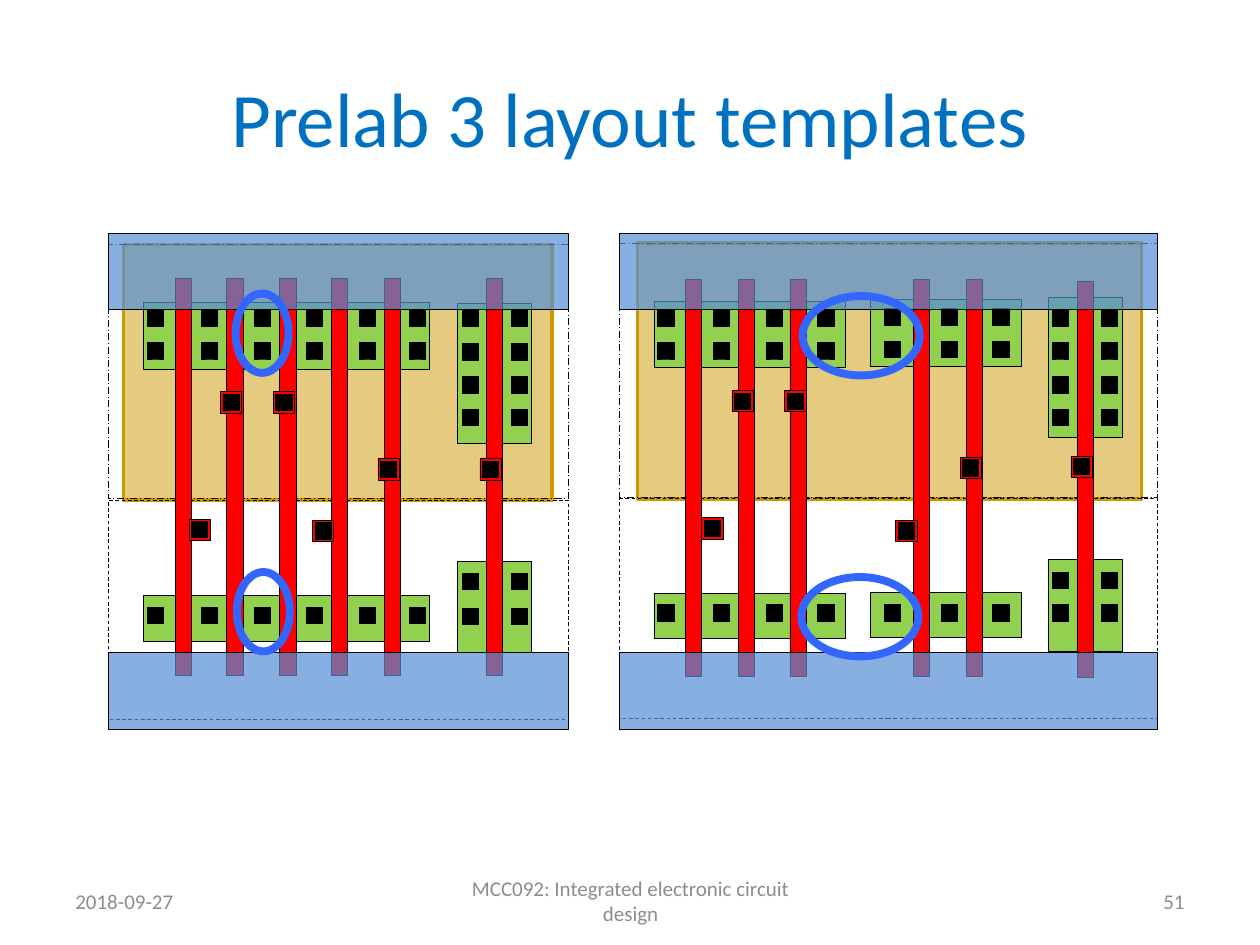
from dataclasses import dataclass
from itertools import product
from typing import Optional

from lxml import etree
from pptx import Presentation
from pptx.dml.color import RGBColor
from pptx.enum.dml import MSO_LINE
from pptx.enum.shapes import MSO_SHAPE
from pptx.enum.text import MSO_ANCHOR, PP_ALIGN
from pptx.oxml.ns import qn
from pptx.shapes.shapetree import GroupShapes, SlideShapes
from pptx.util import Inches, Pt

RECTANGLE, OVAL = MSO_SHAPE.RECTANGLE, MSO_SHAPE.OVAL
DASH, LONG_DASH_DOT = MSO_LINE.DASH, MSO_LINE.LONG_DASH_DOT
LEFT, CENTER, RIGHT = PP_ALIGN.LEFT, PP_ALIGN.CENTER, PP_ALIGN.RIGHT
MIDDLE = MSO_ANCHOR.MIDDLE

BLACK = RGBColor(0x00, 0x00, 0x00)
WELL_OCHRE = RGBColor(0xCC, 0x99, 0x00)
DIFFUSION_GREEN = RGBColor(0x92, 0xD0, 0x50)
POLY_RED = RGBColor(0xFF, 0x00, 0x00)
METAL_BLUE = RGBColor(0x55, 0x8E, 0xD5)
HIGHLIGHT_BLUE = RGBColor(0x33, 0x66, 0xFF)
TITLE_BLUE = RGBColor(0x00, 0x70, 0xC0)
FOOTER_GRAY = RGBColor(0x8C, 0x8C, 0x8C)

CONTACT_SIZE = 0.13
PAD_SIZE = 0.17
PAD_MARGIN = 0.02
GATE_WIDTH, GATE_HEIGHT = 0.13, 3.15
RAIL_HEIGHT = 0.61
RAIL_TOPS = (1.85, 5.18)


@dataclass(frozen=True)
class Box:
    left: float
    top: float
    width: float
    height: float


@dataclass(frozen=True)
class Style:
    fill: Optional[RGBColor] = None
    opacity: int = 100
    line: RGBColor = BLACK
    line_width: float = 0.5
    dash: Optional[MSO_LINE] = None


@dataclass(frozen=True)
class ContactGrid:
    lefts: tuple[float, ...]
    tops: tuple[float, ...]


@dataclass(frozen=True)
class Template:
    well: Box
    p_region: Box
    n_region: Box
    diffusions: tuple[Box, ...]
    gates: tuple[tuple[float, float], ...]
    contacts: tuple[ContactGrid, ...]
    pads: tuple[tuple[float, float], ...]


@dataclass(frozen=True)
class Caption:
    box: Box
    text: str
    size: int
    color: RGBColor
    align: PP_ALIGN


WELL = Style(WELL_OCHRE, 50, WELL_OCHRE, 2)
P_OUTLINE = Style(dash=LONG_DASH_DOT)
N_OUTLINE = Style(dash=DASH)
DIFFUSION = Style(DIFFUSION_GREEN)
POLY = Style(POLY_RED)
CONTACT = Style(BLACK)
METAL = Style(METAL_BLUE, 70)
HIGHLIGHT = Style(line=HIGHLIGHT_BLUE, line_width=4.5)

SHARED_DIFFUSION = Template(
    well=Box(0.98, 1.94, 3.4, 2.03),
    p_region=Box(0.86, 1.94, 3.65, 2.02),
    n_region=Box(0.86, 3.97, 3.65, 1.74),
    diffusions=(
        Box(1.14, 4.73, 2.27, 0.36),
        Box(1.14, 2.4, 2.27, 0.53),
        Box(3.63, 2.41, 0.59, 1.11),
        Box(3.63, 4.46, 0.59, 0.72),
    ),
    gates=tuple((left, 2.21) for left in (1.39, 1.8, 2.22, 2.63, 3.05, 3.86)),
    contacts=(
        ContactGrid((1.17, 1.6, 2.02, 2.43, 2.85, 3.25), (2.46, 2.72, 4.82)),
        ContactGrid((3.67, 4.06), (2.46, 2.73, 2.99, 3.25, 4.55, 4.83)),
    ),
    pads=((1.5, 4.12), (1.75, 3.11), (2.17, 3.11), (2.48, 4.13), (3, 3.64), (3.81, 3.64)),
)

SPLIT_DIFFUSION = Template(
    well=Box(5.06, 1.93, 4, 2.03),
    p_region=Box(4.92, 1.93, 4.27, 2.02),
    n_region=Box(4.92, 3.96, 4.27, 1.74),
    diffusions=(
        Box(6.91, 4.7, 1.2, 0.36),
        Box(6.91, 2.38, 1.2, 0.53),
        Box(5.19, 4.71, 1.52, 0.36),
        Box(5.19, 2.39, 1.52, 0.53),
        Box(8.32, 2.36, 0.59, 1.11),
        Box(8.32, 4.44, 0.59, 0.73),
    ),
    gates=(*((left, 2.22) for left in (5.44, 5.86, 6.27, 7.25, 7.67)), (8.55, 2.23)),
    contacts=(
        ContactGrid((5.22, 5.66, 6.08, 6.49), (2.46, 2.72, 4.8)),
        ContactGrid((7.02, 7.47, 7.88), (2.45, 2.71, 4.8)),
        ContactGrid((8.35, 8.74), (2.46, 2.72, 2.99, 3.25, 4.54, 4.8)),
    ),
    pads=((5.57, 4.11), (5.81, 3.1), (6.23, 3.1), (7.11, 4.13), (7.62, 3.63), (8.5, 3.62)),
)

HIGHLIGHTS = (
    Box(1.88, 4.54, 0.42, 0.63),
    Box(6.36, 4.58, 0.93, 0.63),
    Box(1.87, 2.33, 0.42, 0.63),
    Box(6.37, 2.35, 0.93, 0.63),
)

CAPTIONS = (
    Caption(Box(0.5, 0.3, 9, 1.25), "Prelab 3 layout templates", 44, TITLE_BLUE, CENTER),
    Caption(Box(0.5, 6.95, 2.33, 0.4), "2018-09-27", 12, FOOTER_GRAY, LEFT),
    Caption(Box(3.42, 6.95, 3.17, 0.4), "MCC092: Integrated electronic circuit design",
            12, FOOTER_GRAY, CENTER),
    Caption(Box(7.17, 6.95, 2.33, 0.4), "51", 12, FOOTER_GRAY, RIGHT),
)


def lengths(box: Box) -> tuple[Inches, ...]:
    return tuple(Inches(value) for value in (box.left, box.top, box.width, box.height))


def draw(shapes: GroupShapes, box: Box, style: Style, outline: MSO_SHAPE = RECTANGLE) -> None:
    shape = shapes.add_shape(outline, *lengths(box))
    shape.shadow.inherit = False
    if style.fill is None:
        shape.fill.background()
    else:
        shape.fill.solid()
        shape.fill.fore_color.rgb = style.fill
        if style.opacity < 100:
            color = shape.fill._xPr.find(f"{qn('a:solidFill')}/{qn('a:srgbClr')}")
            etree.SubElement(color, qn("a:alpha"), val=str(style.opacity * 1000))
    shape.line.color.rgb = style.line
    shape.line.width = Pt(style.line_width)
    if style.dash is not None:
        shape.line.dash_style = style.dash


def draw_template(shapes: GroupShapes, template: Template) -> None:
    draw(shapes, template.well, WELL)
    draw(shapes, template.p_region, P_OUTLINE)
    draw(shapes, template.n_region, N_OUTLINE)
    for diffusion in template.diffusions:
        draw(shapes, diffusion, DIFFUSION)
    for left, top in template.gates:
        draw(shapes, Box(left, top, GATE_WIDTH, GATE_HEIGHT), POLY)
    for grid in template.contacts:
        for left, top in product(grid.lefts, grid.tops):
            draw(shapes, Box(left, top, CONTACT_SIZE, CONTACT_SIZE), CONTACT)
    for left, top in template.pads:
        draw(shapes, Box(left, top, PAD_SIZE, PAD_SIZE), POLY)
        draw(shapes, Box(left + PAD_MARGIN, top + PAD_MARGIN, CONTACT_SIZE, CONTACT_SIZE), CONTACT)
    for top in RAIL_TOPS:
        draw(shapes, Box(template.p_region.left, top, template.p_region.width, RAIL_HEIGHT), METAL)


def write(shapes: SlideShapes, caption: Caption) -> None:
    frame = shapes.add_textbox(*lengths(caption.box)).text_frame
    frame.word_wrap = True
    frame.vertical_anchor = MIDDLE
    paragraph = frame.paragraphs[0]
    paragraph.alignment = caption.align
    run = paragraph.add_run()
    run.text = caption.text
    run.font.name = "Calibri"
    run.font.size = Pt(caption.size)
    run.font.color.rgb = caption.color


def main() -> None:
    deck = Presentation()
    deck.slide_width, deck.slide_height = Inches(10), Inches(7.5)
    slide = deck.slides.add_slide(deck.slide_layouts[6])
    for caption in CAPTIONS:
        write(slide.shapes, caption)
    for template in (SHARED_DIFFUSION, SPLIT_DIFFUSION):
        draw_template(slide.shapes.add_group_shape().shapes, template)
    highlights = slide.shapes.add_group_shape().shapes
    for box in HIGHLIGHTS:
        draw(highlights, box, HIGHLIGHT, OVAL)
    deck.save("out.pptx")


if __name__ == "__main__":
    main()
